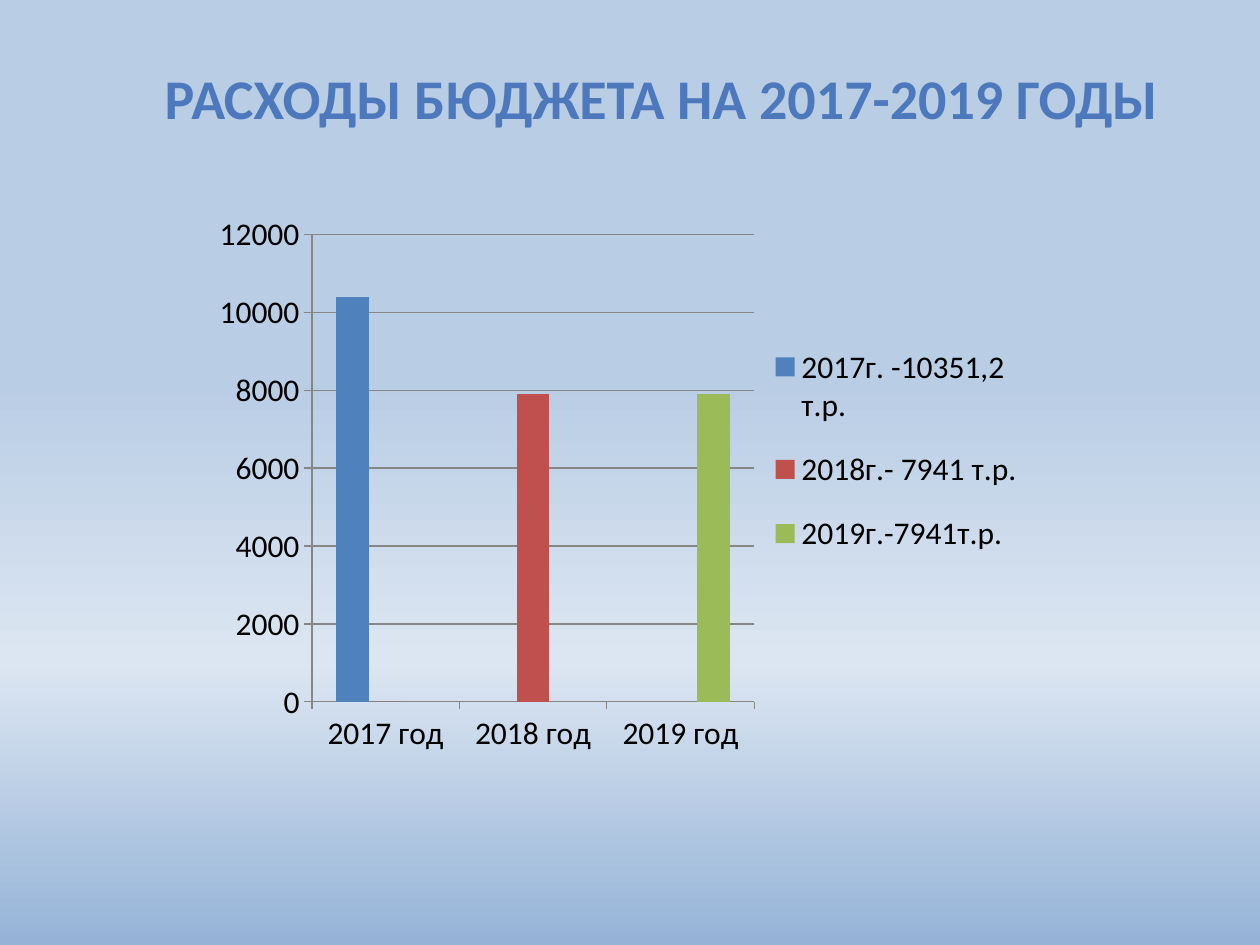
from lxml.etree import SubElement
from pptx import Presentation
from pptx.chart.data import CategoryChartData
from pptx.dml.color import RGBColor
from pptx.enum.chart import XL_CHART_TYPE, XL_LEGEND_POSITION, XL_TICK_MARK
from pptx.enum.text import MSO_ANCHOR, PP_ALIGN
from pptx.oxml.ns import qn
from pptx.util import Inches, Pt

TITLE = "РАСХОДЫ БЮДЖЕТА НА 2017-2019 ГОДЫ"
YEARS = ["2017 год", "2018 год", "2019 год"]
EXPENSES = [
    ("2017г. -10351,2 т.р.", [10400, None, None], "blue"),
    ("2018г.- 7941 т.р.", [0, 7900, None], "red"),
    ("2019г.-7941т.р.", [None, None, 7900], "green"),
]
COLORS = {
    "title": "4D79BC", "text": "000000", "axis": "868686",
    "blue": "4F81BD", "red": "C0504D", "green": "9BBB59",
}
BACKGROUND_STOPS = [(0, "B9CDE5"), (40, "B9CDE5"), (70, "DCE6F2"), (100, "95B3D7")]
LEGEND_AREA = {"x": 0.67, "y": 0.21, "w": 0.31, "h": 0.46}
FONT = "Calibri"


def rgb(name):
    return RGBColor.from_string(COLORS[name])


def set_background(page):
    fill = page.background.fill
    fill.gradient()
    fill.gradient_angle = 270  # counter-clockwise, so top to bottom
    stop_list = page.background._cSld.find(".//" + qn("a:gsLst"))
    for stop in list(stop_list):
        stop_list.remove(stop)
    for percent, color in BACKGROUND_STOPS:
        stop = SubElement(stop_list, qn("a:gs"), pos=str(percent * 1000))
        SubElement(stop, qn("a:srgbClr"), val=color)


def add_title(page):
    box = page.shapes.title
    box.left, box.top, box.width, box.height = map(Inches, (1.17, 0.45, 8.16, 0.64))
    frame = box.text_frame
    frame.text = TITLE
    frame.word_wrap = False
    frame.vertical_anchor = MSO_ANCHOR.TOP
    paragraph = frame.paragraphs[0]
    paragraph.alignment = PP_ALIGN.CENTER
    font = paragraph.runs[0].font
    font.name, font.size, font.bold = FONT, Pt(32), True
    font.color.rgb = rgb("title")


def place_legend(legend):
    """Fix the legend area, given as fractions of the chart."""
    element = legend._element
    layout = element.find(qn("c:layout"))
    if layout is None:
        layout = SubElement(element, qn("c:layout"))
        element.find(qn("c:legendPos")).addnext(layout)
    manual = SubElement(layout, qn("c:manualLayout"))
    for side in "xy":
        SubElement(manual, qn(f"c:{side}Mode"), val="edge")
    for side, fraction in LEGEND_AREA.items():
        SubElement(manual, qn(f"c:{side}"), val=str(fraction))


def add_expense_chart(page):
    data = CategoryChartData()
    data.categories = YEARS
    for name, values, _ in EXPENSES:
        data.add_series(name, values)
    chart = page.shapes.add_chart(
        XL_CHART_TYPE.COLUMN_CLUSTERED,
        Inches(1.61), Inches(1.62), Inches(6.67), Inches(4.44), data,
    ).chart
    chart.has_title = False
    chart.font.name, chart.font.size = FONT, Pt(18)
    chart.font.color.rgb = rgb("text")

    chart.has_legend = True
    chart.legend.position = XL_LEGEND_POSITION.RIGHT
    chart.legend.include_in_layout = False
    place_legend(chart.legend)

    plot = chart.plots[0]
    plot.gap_width, plot.overlap = 150, 0
    plot.vary_by_categories = False
    for series, (_, _, color) in zip(plot.series, EXPENSES):
        series.format.fill.solid()
        series.format.fill.fore_color.rgb = rgb(color)

    value_axis = chart.value_axis
    value_axis.minimum_scale, value_axis.maximum_scale = 0, 12000
    value_axis.major_unit = 2000
    value_axis.has_major_gridlines = True
    for axis in (chart.category_axis, value_axis):
        axis.major_tick_mark = XL_TICK_MARK.OUTSIDE
    for lined in (chart.category_axis, value_axis, value_axis.major_gridlines):
        lined.format.line.color.rgb = rgb("axis")
        lined.format.line.width = Pt(0)


def main():
    deck = Presentation()
    deck.slide_width, deck.slide_height = Inches(10), Inches(7.5)
    page = deck.slides.add_slide(deck.slide_layouts[5])
    set_background(page)
    add_expense_chart(page)
    add_title(page)
    deck.save("out.pptx")


if __name__ == "__main__":
    main()
